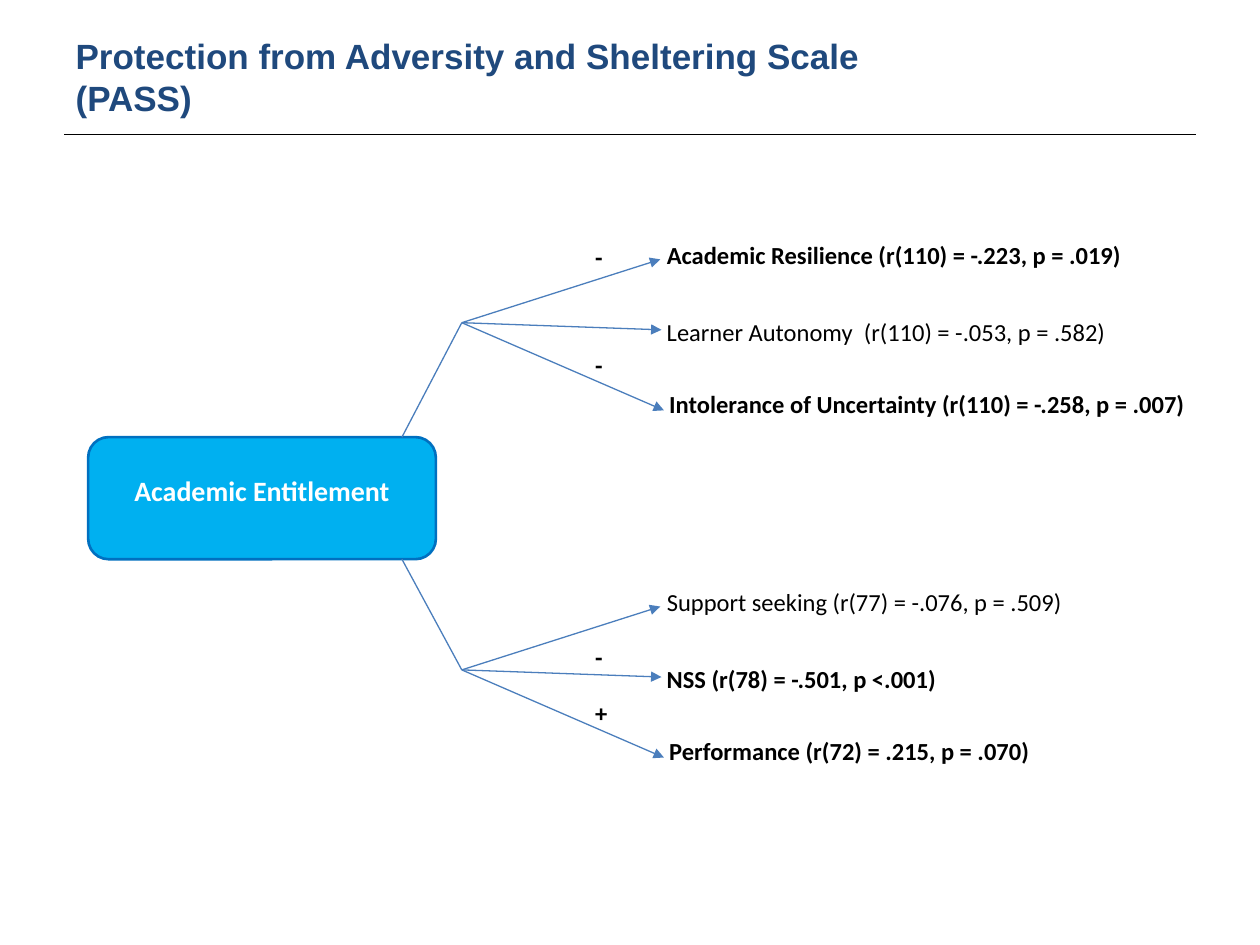
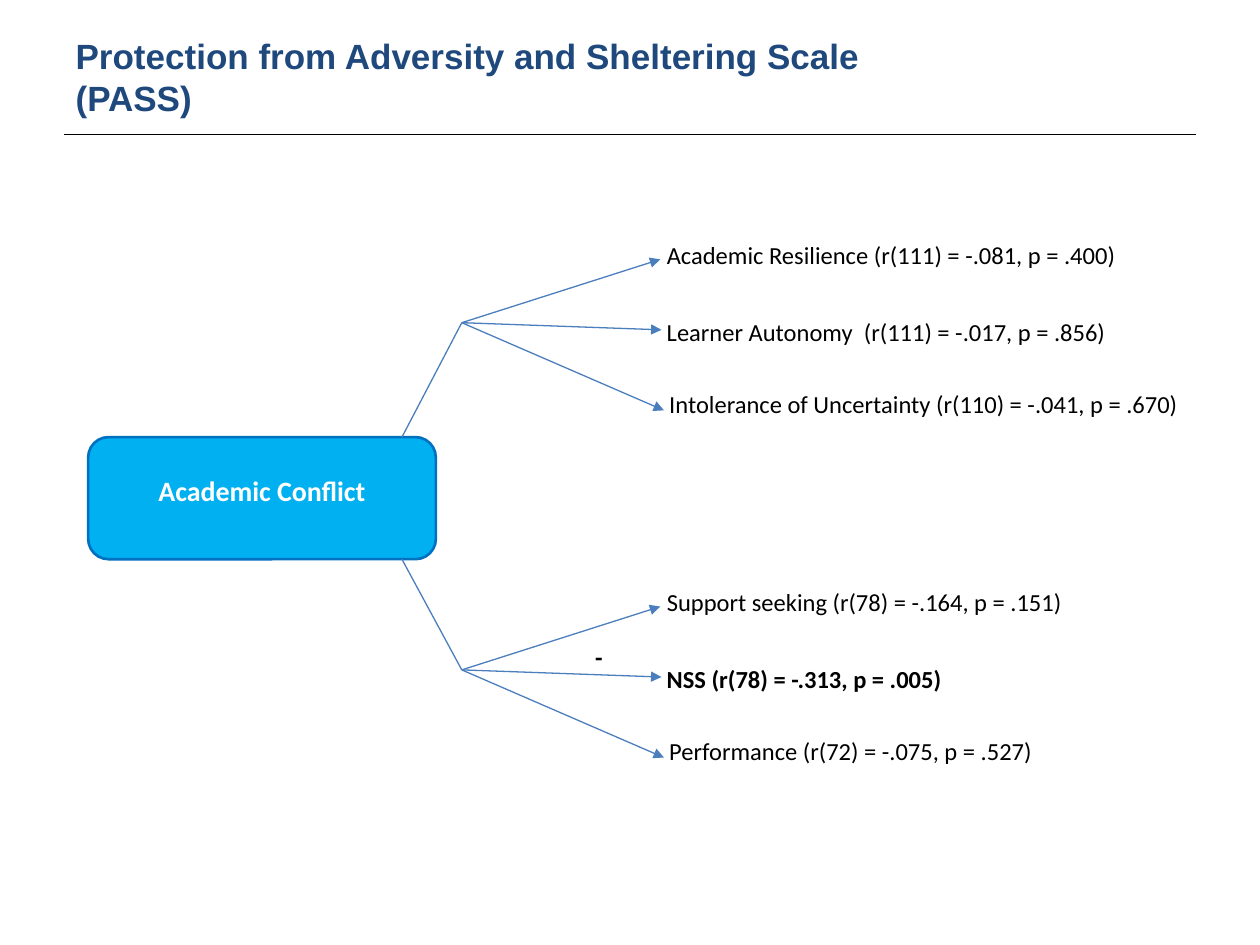
from dataclasses import dataclass

from lxml import etree
from pptx import Presentation
from pptx.dml.color import RGBColor
from pptx.enum.shapes import MSO_CONNECTOR, MSO_SHAPE
from pptx.enum.text import MSO_ANCHOR, MSO_AUTO_SIZE, PP_ALIGN
from pptx.oxml.ns import qn
from pptx.util import Pt

STRAIGHT = MSO_CONNECTOR.STRAIGHT
ROUNDED = MSO_SHAPE.ROUNDED_RECTANGLE
TOP, MIDDLE = MSO_ANCHOR.TOP, MSO_ANCHOR.MIDDLE
LEFT, CENTER = PP_ALIGN.LEFT, PP_ALIGN.CENTER

# Content: (label, sign of a notable correlation or "", bold label)
TITLE = "Protection from Adversity and Sheltering Scale (PASS)"
PAGES = [
    {
        "predictor": "Academic Entitlement",
        "fans": [
            [
                ("Academic Resilience (r(110) = -.223, p = .019)", "-", True),
                ("Learner Autonomy  (r(110) = -.053, p = .582)", "", False),
                ("Intolerance of Uncertainty (r(110) = -.258, p = .007)", "-", True),
            ],
            [
                ("Support seeking (r(77) = -.076, p = .509)", "", False),
                ("NSS (r(78) = -.501, p <.001)", "-", True),
                ("Performance (r(72) = .215, p = .070)", "+", True),
            ],
        ],
    },
    {
        "predictor": "Academic Conflict",
        "fans": [
            [
                ("Academic Resilience (r(111) = -.081, p = .400)", "", False),
                ("Learner Autonomy  (r(111) = -.017, p = .856)", "", False),
                ("Intolerance of Uncertainty (r(110) = -.041, p = .670)", "", False),
            ],
            [
                ("Support seeking (r(78) = -.164, p = .151)", "", False),
                ("NSS (r(78) = -.313, p = .005)", "-", True),
                ("Performance (r(72) = -.075, p = .527)", "", False),
            ],
        ],
    },
]


@dataclass(frozen=True)
class Theme:
    title_color: RGBColor = RGBColor(0x1F, 0x49, 0x7D)
    box_fill: RGBColor = RGBColor(0x00, 0xB0, 0xF0)
    box_line: RGBColor = RGBColor(0x00, 0x70, 0xC0)
    arrow: RGBColor = RGBColor(0x4B, 0x7E, 0xBC)
    black: RGBColor = RGBColor(0, 0, 0)
    white: RGBColor = RGBColor(255, 255, 255)
    title_font: str = "Arial"
    body_font: str = "Calibri"
    title_size: int = 20
    box_size: int = 16
    label_size: int = 14


THEME = Theme()

# Geometry in points; both fans share one form, FAN_STEP apart
PAGE_SIZE = (720, 540)
TITLE_AREA = (36, 21.6, 522.7, 43.9)
RULE = (36.7, 77, 683.3, 77)
BOX = (50.4, 249.8, 198.7, 69.8)
STEM_X = 229.7
HUB = (263.9, 184.4)
FAN_STEP = 198.4
INSET = 3
BOX_TEXT_TOP = 17.5
SIGN_LEFT, SIGN_SIZE = 337, (13, 16)
# One entry per branch: arrow tip, label area, sign top
BRANCHES = [
    ((377.3, 148.2), (378, 134, 277.2, 21), 135.4),
    ((378, 188.5), (378, 178, 263.5, 21.6), 165.2),
    ((379.4, 234.5), (379.4, 219.4, 308.2, 30.2), 197.2),
]


def points(values):
    return [Pt(value) for value in values]


def style(para, font, size, color, bold, align=LEFT):
    para.alignment = align
    para.font.name, para.font.size, para.font.bold = font, Pt(size), bold
    para.font.color.rgb = color


def set_insets(frame, top=INSET):
    frame.margin_left = frame.margin_right = frame.margin_bottom = Pt(INSET)
    frame.margin_top = Pt(top)
    frame.vertical_anchor = TOP
    frame.word_wrap = True


def add_line(shapes, start, end, color, arrow=False):
    line = shapes.add_connector(STRAIGHT, *points((*start, *end)))
    line.line.color.rgb = color
    line.line.width = Pt(0.75)
    properties = line.element.spPr
    if arrow:
        etree.SubElement(properties.find(qn("a:ln")), qn("a:tailEnd"), type="triangle")
    etree.SubElement(properties, qn("a:effectLst"))
    return line


def add_label(shapes, area, text, bold):
    box = shapes.add_textbox(*points(area))
    set_insets(box.text_frame)
    para = box.text_frame.paragraphs[0]
    para.text = text
    style(para, THEME.body_font, THEME.label_size, THEME.black, bold)


def add_title(page):
    title = page.shapes.title
    title.left, title.top, title.width, title.height = points(TITLE_AREA)
    frame = title.text_frame
    frame.text = TITLE
    frame.auto_size = MSO_AUTO_SIZE.NONE
    frame.vertical_anchor = MIDDLE
    style(frame.paragraphs[0], THEME.title_font, THEME.title_size,
          THEME.title_color, True)


def add_predictor(page, text):
    box = page.shapes.add_shape(ROUNDED, *points(BOX))
    box.shadow.inherit = False
    box.fill.solid()
    box.fill.fore_color.rgb = THEME.box_fill
    box.line.color.rgb = THEME.box_line
    box.line.width = Pt(1.5)
    set_insets(box.text_frame, BOX_TEXT_TOP)
    para = box.text_frame.paragraphs[0]
    para.text = text
    style(para, THEME.body_font, THEME.box_size, THEME.white, True, CENTER)


def add_fan(page, outcomes, shift):
    shapes = page.shapes.add_group_shape().shapes
    hub = (HUB[0], HUB[1] + shift)
    for (text, sign, bold), (tip, area, sign_top) in zip(outcomes, BRANCHES):
        left, top, width, height = area
        add_label(shapes, (left, top + shift, width, height), text, bold)
        add_line(shapes, hub, (tip[0], tip[1] + shift), THEME.arrow, arrow=True)
        if sign:
            add_label(shapes, (SIGN_LEFT, sign_top + shift, *SIGN_SIZE), sign, True)
    return hub


def main():
    deck = Presentation()
    deck.slide_width, deck.slide_height = points(PAGE_SIZE)
    layout = deck.slide_layouts[5]
    box_edges = (BOX[1], BOX[1] + BOX[3])

    for content in PAGES:
        page = deck.slides.add_slide(layout)
        add_line(page.shapes, RULE[:2], RULE[2:], THEME.black)
        add_title(page)
        add_predictor(page, content["predictor"])
        # Each fan hangs on a stem from the nearer box edge
        for index, outcomes in enumerate(content["fans"]):
            hub = add_fan(page, outcomes, index * FAN_STEP)
            add_line(page.shapes, hub, (STEM_X, box_edges[index]), THEME.arrow)

    deck.save("out.pptx")


if __name__ == "__main__":
    main()
